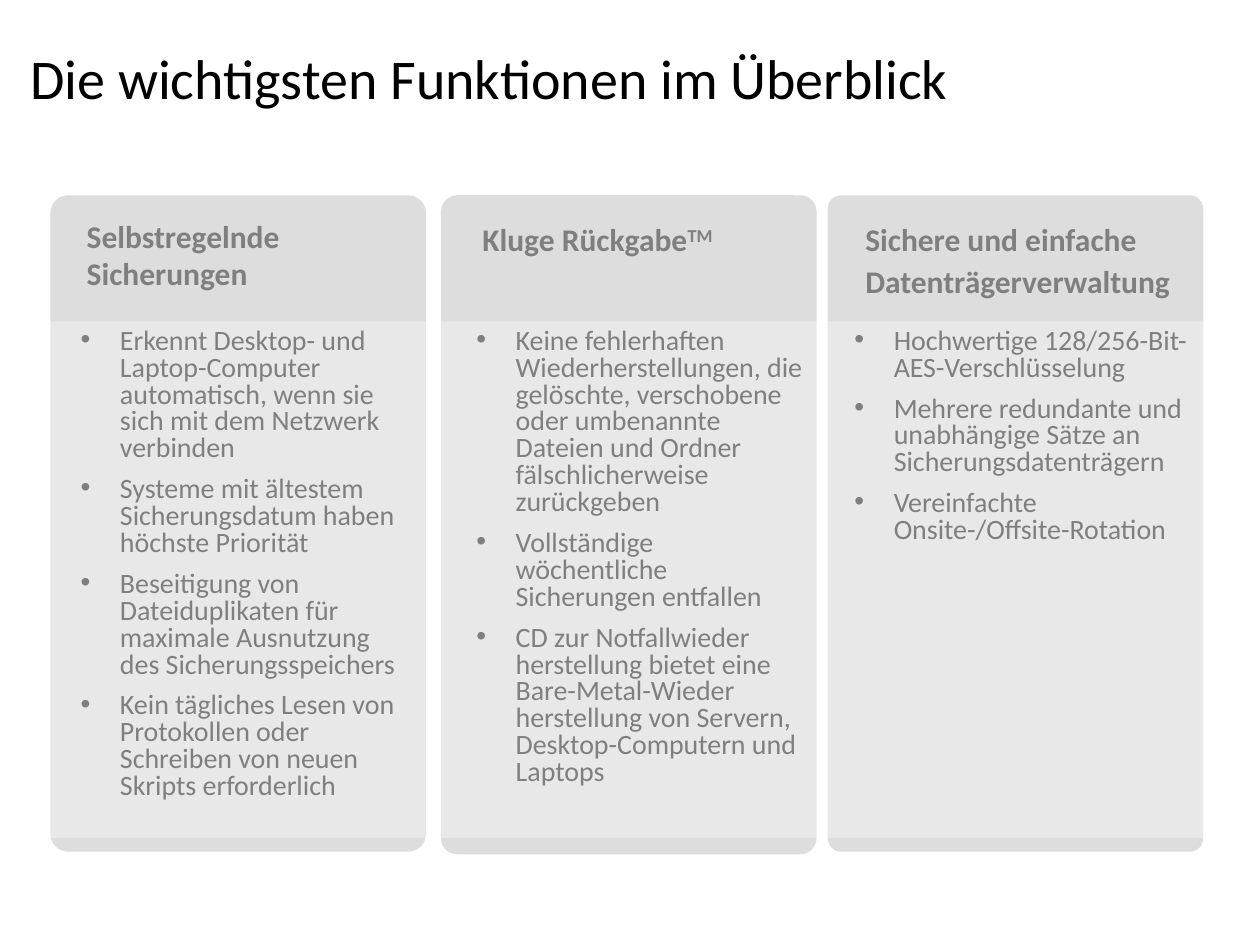
from lxml.etree import SubElement
from pptx import Presentation
from pptx.dml.color import RGBColor
from pptx.enum.shapes import MSO_SHAPE
from pptx.enum.text import MSO_ANCHOR, MSO_AUTO_SIZE, PP_ALIGN
from pptx.oxml.ns import qn
from pptx.util import Pt

# Content
TITLE = "Die wichtigsten Funktionen im Überblick"
COLUMNS = [
    {
        "card": (28.8, 375.1, 0.047),  # left, height, corner
        "heading": "Selbstregelnde\nSicherungen",
        "heading_box": (42.5, 120.2, 208.8, 51),
        "heading_spacing": 1.0,
        "points_box": (46.1, 182.2, 243.4),  # left, width, height
        "points": [
            "Erkennt Desktop- und Laptop-Computer automatisch, wenn sie sich mit dem Netzwerk verbinden",
            "Systeme mit ältestem Sicherungsdatum haben höchste Priorität",
            "Beseitigung von Dateiduplikaten für maximale Ausnutzung des Sicherungsspeichers",
            "Kein tägliches Lesen von Protokollen oder Schreiben von neuen Skripts erforderlich",
        ],
    },
    {
        "card": (252, 376.6, 0.043),
        "heading": "Kluge Rückgabe",
        "superscript": "TM",
        "heading_box": (268.6, 122.4, 186.5, 29),
        "heading_spacing": 1.0,
        "points_box": (272.2, 187.2, 299.5),
        "points": [
            "Keine fehlerhaften Wiederherstellungen, die gelöschte, verschobene oder umbenannte "
            "Dateien und Ordner fälschlicherweise zurückgeben",
            "Vollständige wöchentliche Sicherungen entfallen",
            "CD zur Notfallwieder\nherstellung bietet eine Bare-Metal-Wieder\n"
            "herstellung von Servern, Desktop-Computern und Laptops",
        ],
    },
    {
        "card": (473, 375.1, 0.036),
        "heading": "Sichere und einfache Datenträgerverwaltung",
        "heading_box": (487.4, 120.2, 196.6, 54.7),
        "heading_spacing": 1.1,
        "points_box": (488.2, 195.8, 200.2),
        "points": [
            "Hochwertige 128/256-Bit-AES-Verschlüsselung",
            "Mehrere redundante und unabhängige Sätze an Sicherungsdatenträgern",
            "Vereinfachte Onsite-/Offsite-Rotation",
        ],
    },
]

CARD_TOP, CARD_WIDTH, POINTS_TOP = 111.6, 214.6, 187.9
INDENT = 22.5
FONT, GREY = "Calibri", "7F7F7F"


def color(hex_code):
    return RGBColor.from_string(hex_code)


def style(font, size, hex_code, bold=False):
    font.name, font.size, font.bold = FONT, Pt(size), bold
    font.color.rgb = color(hex_code)


def add_panel(kind, box, hex_code):
    panel = slide.shapes.add_shape(kind, *map(Pt, box))
    panel.shadow.inherit = False
    panel.fill.solid()
    panel.fill.fore_color.rgb = color(hex_code)
    panel.line.fill.background()
    return panel


def add_text_frame(box):
    frame = slide.shapes.add_textbox(*map(Pt, box)).text_frame
    frame.word_wrap = True
    return frame


def add_bullet(paragraph):
    properties = paragraph._p.get_or_add_pPr()
    properties.set("marL", str(Pt(INDENT)))
    properties.set("indent", str(-Pt(INDENT)))
    bullet_color = SubElement(properties, qn("a:buClr"))
    SubElement(bullet_color, qn("a:srgbClr"), val=GREY)
    SubElement(properties, qn("a:buFont"), typeface="Arial")
    SubElement(properties, qn("a:buChar"), char="•")


def add_heading(column):
    paragraph = add_text_frame(column["heading_box"]).paragraphs[0]
    paragraph.text = column["heading"]
    paragraph.line_spacing = column["heading_spacing"]
    if "superscript" in column:
        mark = paragraph.add_run()
        mark.text = column["superscript"]
        mark._r.get_or_add_rPr().set("baseline", "30000")
    for run in paragraph.runs:
        style(run.font, 18, GREY, bold=True)


def add_points(column):
    left, width, height = column["points_box"]
    frame = add_text_frame((left, POINTS_TOP, width, height))
    frame.margin_left = frame.margin_right = frame.margin_top = frame.margin_bottom = 0
    for index, point in enumerate(column["points"]):
        paragraph = frame.add_paragraph() if index else frame.paragraphs[0]
        paragraph.text = point
        paragraph.line_spacing = 0.8
        if index:
            paragraph.space_before = Pt(8)
        add_bullet(paragraph)
        for run in paragraph.runs:
            style(run.font, 16, GREY)


presentation = Presentation()
presentation.slide_width, presentation.slide_height = Pt(720), Pt(540)
slide = presentation.slides.add_slide(presentation.slide_layouts[5])

# Title
title = slide.shapes.title
title.left, title.top, title.width, title.height = map(Pt, (10.1, 23.8, 696.2, 43.9))
title.text_frame.text = TITLE
title.text_frame.auto_size = MSO_AUTO_SIZE.NONE
title.text_frame.vertical_anchor = MSO_ANCHOR.MIDDLE
title_line = title.text_frame.paragraphs[0]
title_line.alignment = PP_ALIGN.LEFT
title_line.line_spacing = 0.95
style(title_line.runs[0].font, 32, "000000")

# Cards, with a translucent veil over their bodies
for column in COLUMNS:
    left, height, corner = column["card"]
    card = add_panel(MSO_SHAPE.ROUNDED_RECTANGLE, (left, CARD_TOP, CARD_WIDTH, height), "DDDDDD")
    card.adjustments[0] = corner
veil = add_panel(MSO_SHAPE.RECTANGLE, (18.7, 183.6, 671, 295.2), "FFFFFF")
veil_color = veil._element.spPr.find(qn("a:solidFill")).find(qn("a:srgbClr"))
SubElement(veil_color, qn("a:alpha"), val="35000")

# Headings and bullet points
for column in COLUMNS:
    add_heading(column)
    add_points(column)

presentation.save("out.pptx")
